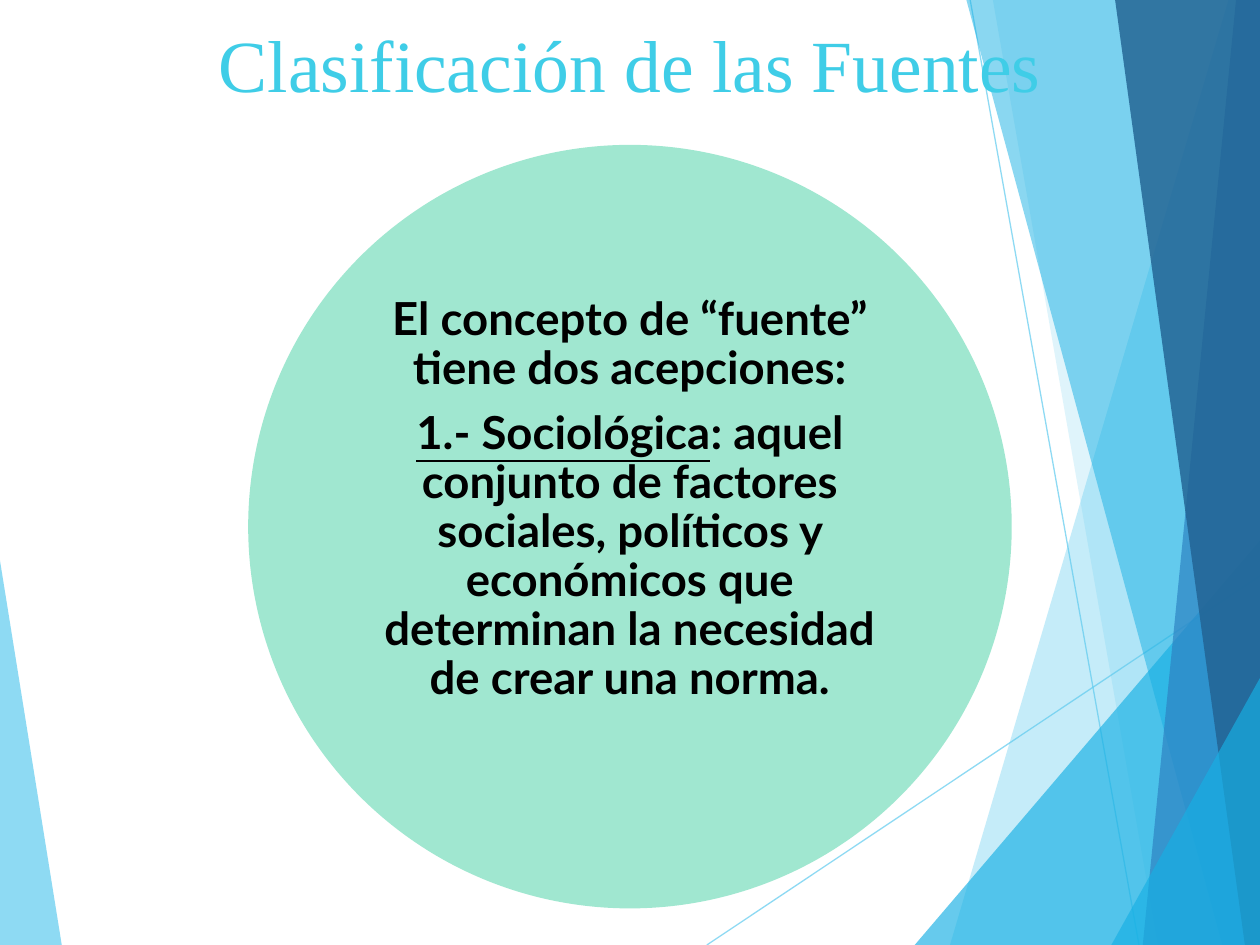
from lxml.etree import SubElement
from pptx import Presentation
from pptx.dml.color import RGBColor
from pptx.enum.shapes import MSO_CONNECTOR, MSO_SHAPE
from pptx.enum.text import MSO_ANCHOR as Anchor, PP_ALIGN as Align
from pptx.oxml.ns import qn
from pptx.util import Inches, Pt

SKY = RGBColor(0x5F, 0xCB, 0xEF)
CYAN = RGBColor(0x17, 0xB0, 0xE4)
BLUE = RGBColor(0x2E, 0x83, 0xC3)
NAVY = RGBColor(0x22, 0x62, 0x92)
TITLE_COLOR = RGBColor(0x3F, 0xCD, 0xE7)
GREEN = RGBColor(0x42, 0xD0, 0xA2)
BLACK = RGBColor(0, 0, 0)
WIDTH, HEIGHT = 10, 7.5


def paint(fill, color, opacity):
    """Solid fill with an opacity in percent."""
    fill.solid()
    fill.fore_color.rgb = color
    color_element = fill._xPr.find(qn("a:solidFill"))[0]
    SubElement(color_element, qn("a:alpha"), val=str(opacity * 1000))


def apply_format(target, values):
    for name, value in values.items():
        setattr(target, name, value)


presentation = Presentation()
presentation.slide_width = Inches(WIDTH)
presentation.slide_height = Inches(HEIGHT)
slide = presentation.slides.add_slide(presentation.slide_layouts[5])
shapes = slide.shapes

# Thin background lines
for start, end in [((5.61, HEIGHT), (WIDTH, 4.57)), ((7.7, 0), (9.04, HEIGHT))]:
    line = shapes.add_connector(
        MSO_CONNECTOR.STRAIGHT, *[Inches(value) for value in start + end])
    line.line.width = Pt(0.75)
    paint(line.line.fill, SKY, 70)
    SubElement(line._element.spPr, qn("a:effectLst"))

# Translucent facets: the left one, then those that reach the right edge,
# each given by its top x, top y and bottom x
left_facet = [(0, 4.45), (0.49, HEIGHT), (0, HEIGHT)]
facets = [(left_facet, SKY, 70)]
for top_x, top_y, bottom_x, color, opacity in [
    (9.75, 0, 7.54, SKY, 36),
    (7.88, 0, 9.19, SKY, 20),
    (WIDTH, 4.29, 7.26, CYAN, 66),
    (7.67, 0, 9.7, CYAN, 50),
    (9.81, 0, 9.07, BLUE, 70),
    (8.85, 0, 9.88, NAVY, 82),
    (WIDTH, 5.38, 8.82, CYAN, 66),
]:
    points = [(top_x, top_y), (bottom_x, HEIGHT), (WIDTH, HEIGHT)]
    if top_x < WIDTH:
        points.append((WIDTH, top_y))
    facets.append((points, color, opacity))

for points, color, opacity in facets:
    corners = [(Inches(x), Inches(y)) for x, y in points]
    builder = shapes.build_freeform(*corners[0])
    builder.add_line_segments(corners[1:], close=True)
    facet = builder.convert_to_shape()
    facet.shadow.inherit = False
    facet.line.fill.background()
    paint(facet.fill, color, opacity)

# Title, placed in front of the facets
title = shapes.title
shapes._spTree.append(title._element)
apply_format(title, {"left": 0, "top": Inches(0.1),
                     "width": Inches(WIDTH), "height": Inches(0.8)})
title.text_frame.vertical_anchor = Anchor.TOP
paragraph = title.text_frame.paragraphs[0]
paragraph.text = "Clasificación de las Fuentes"
paragraph.alignment = Align.CENTER
apply_format(paragraph.runs[0].font, {"name": "Times New Roman", "size": Pt(42)})
paragraph.runs[0].font.color.rgb = TITLE_COLOR

# Circle centred across the slide
diameter = 6.06
circle = shapes.add_shape(
    MSO_SHAPE.OVAL, Inches((WIDTH - diameter) / 2), Inches(1.15),
    Inches(diameter), Inches(diameter))
circle.shadow.inherit = False
circle.line.fill.background()
paint(circle.fill, GREEN, 50)

# Text inside the circle
text_width = 4.29
text_box = shapes.add_textbox(
    Inches((WIDTH - text_width) / 2), Inches(2.04),
    Inches(text_width), Inches(3.86))
frame = text_box.text_frame
apply_format(frame, {"word_wrap": True, "vertical_anchor": Anchor.MIDDLE,
                     "margin_left": 0, "margin_right": 0,
                     "margin_top": 0, "margin_bottom": 0})
concept = [
    [("El concepto de “fuente” tiene dos acepciones:", False)],
    [("1.- Sociológica", True),
     (": aquel conjunto de factores sociales, políticos y económicos que "
      "determinan la necesidad de crear una norma.", False)],
]
for index, pieces in enumerate(concept):
    paragraph = frame.add_paragraph() if index else frame.paragraphs[0]
    apply_format(paragraph, {"alignment": Align.CENTER, "line_spacing": 0.9,
                             "space_before": Pt(9 if index else 0)})
    for text, underline in pieces:
        run = paragraph.add_run()
        run.text = text
        apply_format(run.font, {"name": "Lato", "size": Pt(26),
                                "bold": True, "underline": underline})
        run.font.color.rgb = BLACK

presentation.save("out.pptx")
